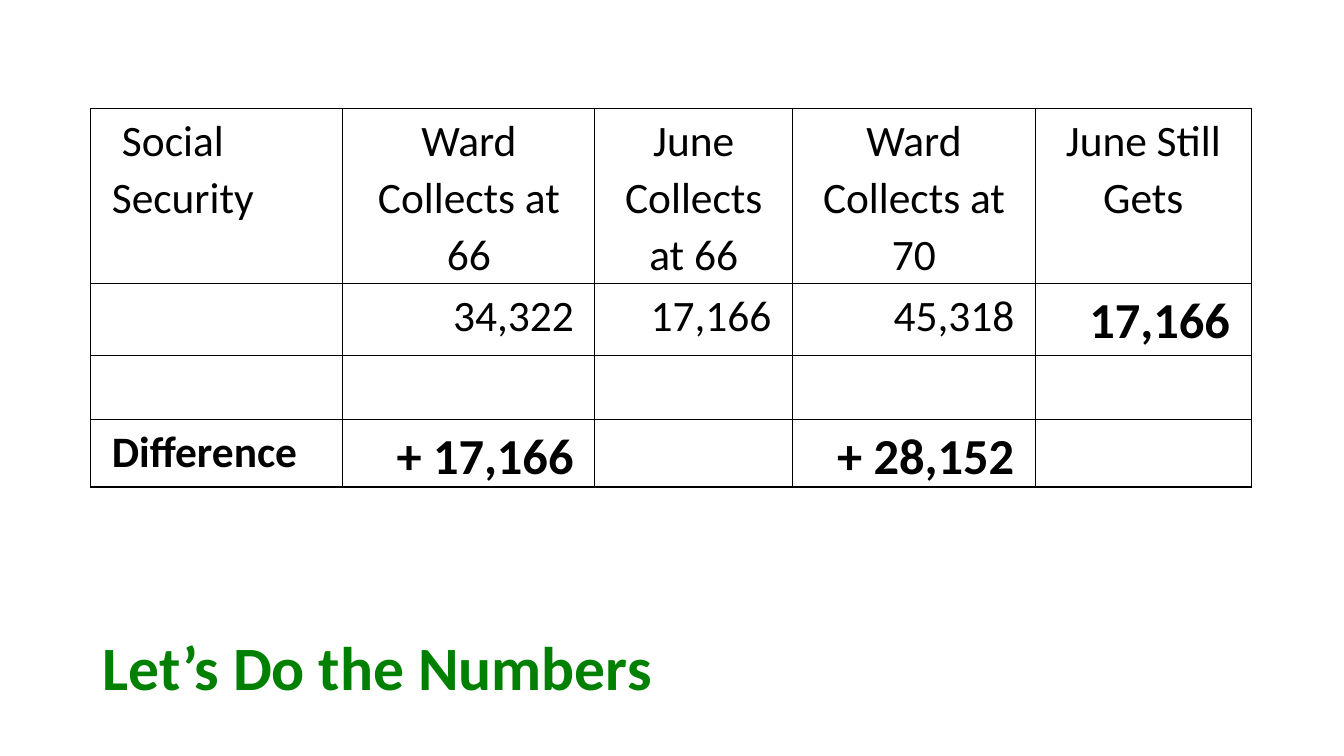
from lxml import etree
from pptx import Presentation
from pptx.dml.color import RGBColor
from pptx.enum.text import MSO_ANCHOR, PP_ALIGN
from pptx.oxml.ns import qn
from pptx.util import Inches, Pt

BLACK = RGBColor(0x00, 0x00, 0x00)
GREEN = RGBColor(0x00, 0x80, 0x00)
LEFT, CENTER, RIGHT = PP_ALIGN.LEFT, PP_ALIGN.CENTER, PP_ALIGN.RIGHT
MIDDLE = MSO_ANCHOR.MIDDLE
FONT = "Calibri"

COLUMN_WIDTHS = [2.5, 2.5, 1.96, 2.41, 2.14]
ROW_HEIGHTS = [1.73, 0.72, 0.63, 0.63]
ROWS = [
    ["Social Security", "Ward Collects at 66", "June Collects at 66",
     "Ward Collects at 70", "June Still Gets"],
    ["", "34,322", "17,166", "45,318", "17,166"],
    ["", "", "", "", ""],
    ["Difference", "+ 17,166", "", "+ 28,152", ""],
]
BIG_FIGURES = [(1, 4), (3, 1), (3, 3)]


def style_paragraph(para, size, color, bold, spacing):
    para.line_spacing = spacing
    for span in para.runs:
        span.font.name = FONT
        span.font.size = Pt(size)
        span.font.bold = bold
        span.font.color.rgb = color


def add_borders(cell):
    properties = cell._tc.get_or_add_tcPr()
    for side in ("lnL", "lnR", "lnT", "lnB"):
        line = etree.SubElement(properties, qn(f"a:{side}"), w=str(Pt(1)))
        fill = etree.SubElement(line, qn("a:solidFill"))
        etree.SubElement(fill, qn("a:srgbClr"), val=str(BLACK))


deck = Presentation()
deck.slide_width = Inches(13.33)
deck.slide_height = Inches(7.5)
page = deck.slides.add_slide(deck.slide_layouts[6])

# Title
title = page.shapes.add_textbox(Inches(0.92), Inches(6.05), Inches(8.83), Inches(1.2))
title.text_frame.word_wrap = True
title.text_frame.vertical_anchor = MIDDLE
title.text_frame.text = "Let’s Do the Numbers"
style_paragraph(title.text_frame.paragraphs[0], 44, GREEN, True, 0.9)

# Benefits table
benefits = page.shapes.add_table(
    len(ROWS), len(COLUMN_WIDTHS), Inches(0.9), Inches(1.08),
    Inches(sum(COLUMN_WIDTHS)), Inches(sum(ROW_HEIGHTS))).table
benefits.first_row = False
benefits.horz_banding = False
for column, width in zip(benefits.columns, COLUMN_WIDTHS):
    column.width = Inches(width)
for row, height in zip(benefits.rows, ROW_HEIGHTS):
    row.height = Inches(height)

for row_number, row_texts in enumerate(ROWS):
    for column_number, text in enumerate(row_texts):
        cell = benefits.cell(row_number, column_number)
        cell.margin_left = cell.margin_right = Inches(0.21)
        cell.margin_top = Inches(0.03)
        cell.margin_bottom = 0
        add_borders(cell)
        cell.fill.background()
        cell.text = text
        para = cell.text_frame.paragraphs[0]
        if column_number == 0:
            para.alignment = LEFT
        else:
            para.alignment = CENTER if row_number == 0 else RIGHT
        big = (row_number, column_number) in BIG_FIGURES
        style_paragraph(para, 36 if big else 31, BLACK, big or text == "Difference", 1.07)

# First-line indent of the corner heading
corner = benefits.cell(0, 0).text_frame.paragraphs[0]
corner._p.get_or_add_pPr().set("indent", str(Inches(0.1)))

deck.save("out.pptx")
